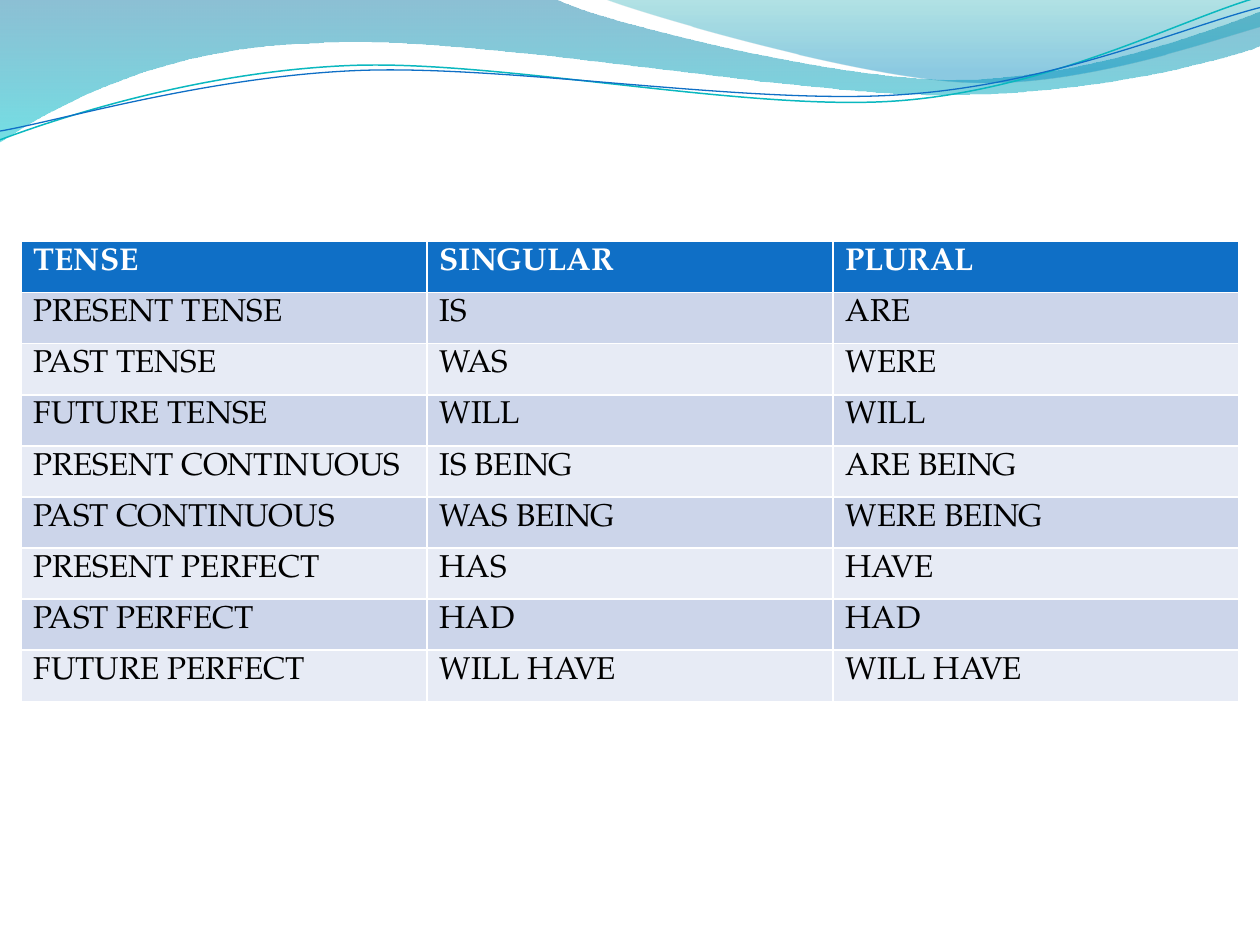
from math import cos, radians, sin

from lxml.etree import SubElement
from pptx import Presentation
from pptx.dml.color import RGBColor
from pptx.oxml.ns import qn
from pptx.util import Pt

PX = 3048  # 300 px to the inch
GRID = 3   # px to one step of the wave paths
TILT = -2.7
FONT = "TeX Gyre Pagella"
WHITE, BLACK, BLUE, TEAL = "FFFFFF", "000000", "0F6FC6", "0AB8BF"
BANDS = ("CCD5EA", "E7EBF5")

# Paths: a pair is a line end, six numbers are a cubic curve
LEFT_SWOOSH = [
    (0, 0), (440, -1), (476, 17, 664, 63, 758, 63),
    (853, 63, 958, 26, 1000, 9), (1001, 36),
    (983, 44, 870, 76, 746, 75), (622, 75, 382, 28, 257, 34),
    (129, 36, 46, 83, -1, 113),
]
RIGHT_SWOOSH = [
    (479, -1), (509, 11, 682, 62, 769, 65),
    (856, 69, 961, 32, 1000, 21), (1000, 0),
]
TEAL_WAVE = [
    (0, 111), (48, 93, 158, 57, 277, 52),
    (395, 47, 593, 89, 713, 80), (833, 71, 938, 15, 998, -2),
]
BLUE_WAVE = [
    (0, 104), (47, 96, 164, 61, 283, 56),
    (403, 51, 597, 84, 717, 75), (836, 67, 941, 21, 1000, 6),
]

ROWS = [
    ("TENSE", "SINGULAR", "PLURAL"),
    ("PRESENT TENSE", "IS", "ARE"),
    ("PAST TENSE", "WAS", "WERE"),
    ("FUTURE TENSE", "WILL", "WILL"),
    ("PRESENT CONTINUOUS", "IS BEING", "ARE BEING"),
    ("PAST CONTINUOUS", "WAS BEING", "WERE BEING"),
    ("PRESENT PERFECT", "HAS", "HAVE"),
    ("PAST PERFECT", "HAD", "HAD"),
    ("FUTURE PERFECT", "WILL HAVE", "WILL HAVE"),
]


def paint(color, value):
    color.rgb = RGBColor.from_string(value)


def turn(point, hub, angle):
    """Rotate a point clockwise about a hub."""
    x, y = point[0] - hub[0], point[1] - hub[1]
    c, s = cos(radians(angle)), sin(radians(angle))
    return hub[0] + x * c - y * s, hub[1] + x * s + y * c


def bend(shape, steps):
    """Join each three line ends of a cubic step into one curve."""
    lines = iter(list(shape.element.iter(qn("a:lnTo"))))
    for step in steps[1:]:
        first = next(lines)
        if len(step) == 6:
            first.tag = qn("a:cubicBezTo")
            for _ in range(2):
                line = next(lines)
                first.append(line[0])
                line.getparent().remove(line)


def draw(slide, box, steps, close, hub=(0, 0), tilt=0):
    left, top = box[:2]
    points = []
    for step in steps:
        for pair in zip(step[::2], step[1::2]):
            x, y = turn(pair, hub, -tilt)
            points.append((round((left + x * GRID) * PX),
                           round((top + y * GRID) * PX)))
    pen = slide.shapes.build_freeform(*points[0])
    pen.add_line_segments(points[1:], close=close)
    shape = pen.convert_to_shape()
    bend(shape, steps)
    shape.rotation = tilt
    shape.shadow.inherit = False
    return shape


def add_swoosh(slide, box, steps, stops):
    shape = draw(slide, box, steps, True)
    shape.line.fill.background()
    shape.fill.gradient()
    shape.fill.gradient_angle = 270
    for stop, (place, color, _) in zip(shape.fill.gradient_stops, stops):
        stop.position = place
        paint(stop.color, color)
    for node, (_, _, alpha) in zip(shape.element.iter(qn("a:srgbClr")), stops):
        SubElement(node, qn("a:alpha"), val=str(alpha * 1000))


def add_wave(slide, box, steps, hub, color, width):
    shape = draw(slide, box, steps, False, hub, TILT)
    shape.fill.background()
    paint(shape.line.color, color)
    shape.line.width = Pt(width)


def add_banner(slide, box):
    add_swoosh(slide, box, LEFT_SWOOSH,
               [(0, "0074A1", 45), (1, "00C6CF", 55)])
    add_swoosh(slide, box, RIGHT_SWOOSH,
               [(0, "00A1A9", 30), (0.8, "008BBF", 45)])
    add_wave(slide, box, TEAL_WAVE, (499, 57.5), TEAL, 0.85)
    add_wave(slide, box, BLUE_WAVE, (499.5, 59), BLUE, 0.75)


def fill_cell(cell, text, row):
    head = row == 0
    cell.fill.solid()
    paint(cell.fill.fore_color, BLUE if head else BANDS[(row - 1) % 2])
    cell.text_frame.text = text
    font = cell.text_frame.paragraphs[0].runs[0].font
    font.name, font.size, font.bold = FONT, Pt(18), head
    paint(font.color, WHITE if head else BLACK)


def add_tenses(slide, box):
    # The default table style draws the white rules
    frame = slide.shapes.add_table(len(ROWS), len(ROWS[0]),
                                   *(n * PX for n in box))
    for row, texts in enumerate(ROWS):
        for col, text in enumerate(texts):
            fill_cell(frame.table.cell(row, col), text, row)


def main():
    deck = Presentation()
    deck.slide_width, deck.slide_height = 3000 * PX, 2250 * PX
    slide = deck.slides.add_slide(deck.slide_layouts[6])
    add_banner(slide, (0, 0, 3000, 339))
    add_tenses(slide, (50, 575, 2900, 1095))
    deck.save("out.pptx")


if __name__ == "__main__":
    main()
